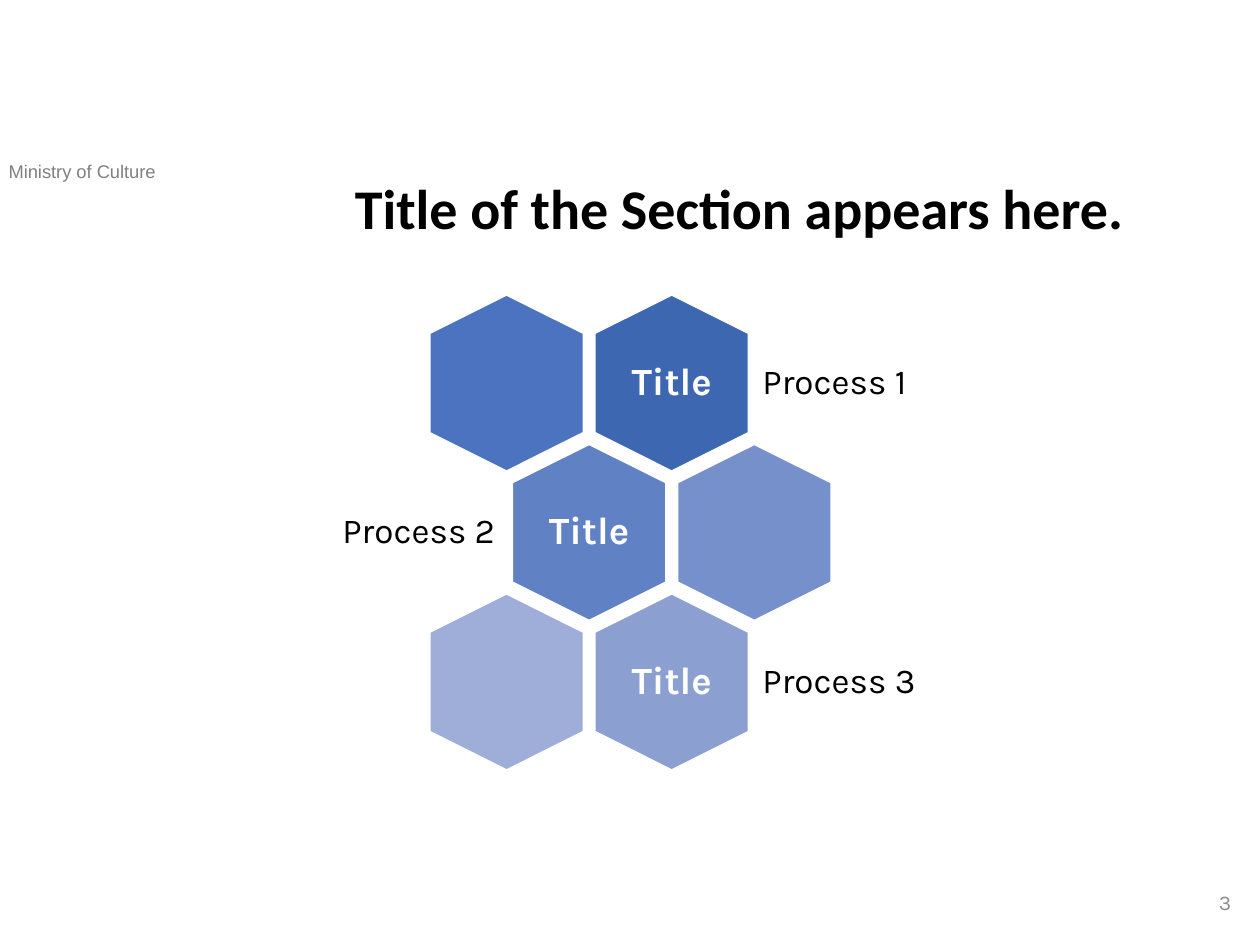
from dataclasses import dataclass

from pptx import Presentation
from pptx.dml.color import RGBColor
from pptx.enum.shapes import MSO_SHAPE
from pptx.enum.text import MSO_ANCHOR, PP_ALIGN
from pptx.slide import Slide
from pptx.util import Pt

HEXAGON = MSO_SHAPE.HEXAGON
TOP, MIDDLE = MSO_ANCHOR.TOP, MSO_ANCHOR.MIDDLE
LEFT, CENTER, RIGHT = PP_ALIGN.LEFT, PP_ALIGN.CENTER, PP_ALIGN.RIGHT

COLORS = {
    "black": "000000",
    "white": "FFFFFF",
    "ministry": "808080",
    "page": "8C8C8C",
}

HEX_WIDTH, HEX_HEIGHT = 100.8, 87.84
GRID_LEFT, GRID_TOP = 239.04, 174.96
COLUMN_PITCH, ROW_PITCH = 94.4, 85.4


@dataclass
class Box:
    left: float
    top: float
    width: float
    height: float


@dataclass
class Style:
    font: str
    size: float
    color: str
    bold: bool = False
    align: PP_ALIGN = LEFT
    anchor: MSO_ANCHOR = TOP
    line_spacing: float = 1.0
    inset: float | None = None


@dataclass
class Process:
    label: str
    titled_column: int
    fills: tuple[str, str]
    label_align: PP_ALIGN


PROCESSES = [
    Process("Process 1", 1, ("4C73BF", "3E67B2"), LEFT),
    Process("Process 2", 0, ("6181C5", "7690CB"), RIGHT),
    Process("Process 3", 1, ("9FAED8", "8B9FD1"), LEFT),
]

MINISTRY = Style("Arial", 10.5, "ministry")
HEADING = Style("Calibri", 32, "black", True, CENTER, TOP, 0.9)
PAGE = Style("Karla", 12, "page", False, RIGHT, MIDDLE)
HEX_TITLE = Style("Karla", 22, "white", True, CENTER, MIDDLE, 0.9, 6.5)


def add_text(slide: Slide, text: str, box: Box, style: Style) -> None:
    frame = slide.shapes.add_textbox(
        Pt(box.left), Pt(box.top), Pt(box.width), Pt(box.height)
    ).text_frame
    frame.word_wrap = True
    frame.vertical_anchor = style.anchor
    if style.inset is not None:
        frame.margin_left = frame.margin_right = Pt(style.inset)
        frame.margin_top = frame.margin_bottom = Pt(style.inset)
    paragraph = frame.paragraphs[0]
    paragraph.text = text
    paragraph.alignment = style.align
    paragraph.line_spacing = style.line_spacing
    paragraph.font.name = style.font
    paragraph.font.size = Pt(style.size)
    paragraph.font.bold = style.bold
    paragraph.font.color.rgb = RGBColor.from_string(COLORS[style.color])


def add_hexagon(slide: Slide, left: float, top: float, fill: str) -> None:
    hexagon = slide.shapes.add_shape(
        HEXAGON, Pt(left), Pt(top), Pt(HEX_WIDTH), Pt(HEX_HEIGHT)
    )
    hexagon.rotation = 90
    hexagon.shadow.inherit = False
    hexagon.fill.solid()
    hexagon.fill.fore_color.rgb = RGBColor.from_string(fill)
    hexagon.line.color.rgb = RGBColor.from_string(COLORS["white"])
    hexagon.line.width = Pt(1)


def add_process(slide: Slide, row: int, process: Process) -> None:
    row_left = GRID_LEFT + row % 2 * COLUMN_PITCH / 2
    top = GRID_TOP + row * ROW_PITCH
    for column, fill in enumerate(process.fills):
        add_hexagon(slide, row_left + column * COLUMN_PITCH, top, fill)

    left = row_left + process.titled_column * COLUMN_PITCH
    add_text(slide, "Title", Box(left + 20.16, top + 9.36, 60.48, 69.12), HEX_TITLE)

    label_style = Style(
        "Karla", 20, "black", False, process.label_align, MIDDLE, 0.9, 5.76
    )
    if process.label_align == LEFT:
        label_box = Box(left + 96.48, top + 13.68, 112.32, 60.48)
    else:
        label_box = Box(left - 106.2, top + 13.68, 108.72, 60.48)
    add_text(slide, process.label, label_box, label_style)


def main() -> None:
    presentation = Presentation()
    presentation.slide_width, presentation.slide_height = Pt(720), Pt(540)
    slide = presentation.slides.add_slide(presentation.slide_layouts[6])

    add_text(slide, "Ministry of Culture", Box(-2.16, 87.84, 156.96, 20.16), MINISTRY)
    for row, process in enumerate(PROCESSES):
        add_process(slide, row, process)
    add_text(slide, "3", Box(548.64, 501.12, 162, 28.8), PAGE)
    add_text(
        slide,
        "Title of the Section appears here.",
        Box(190.08, 100.08, 465.12, 56.88),
        HEADING,
    )
    presentation.save("out.pptx")


if __name__ == "__main__":
    main()
